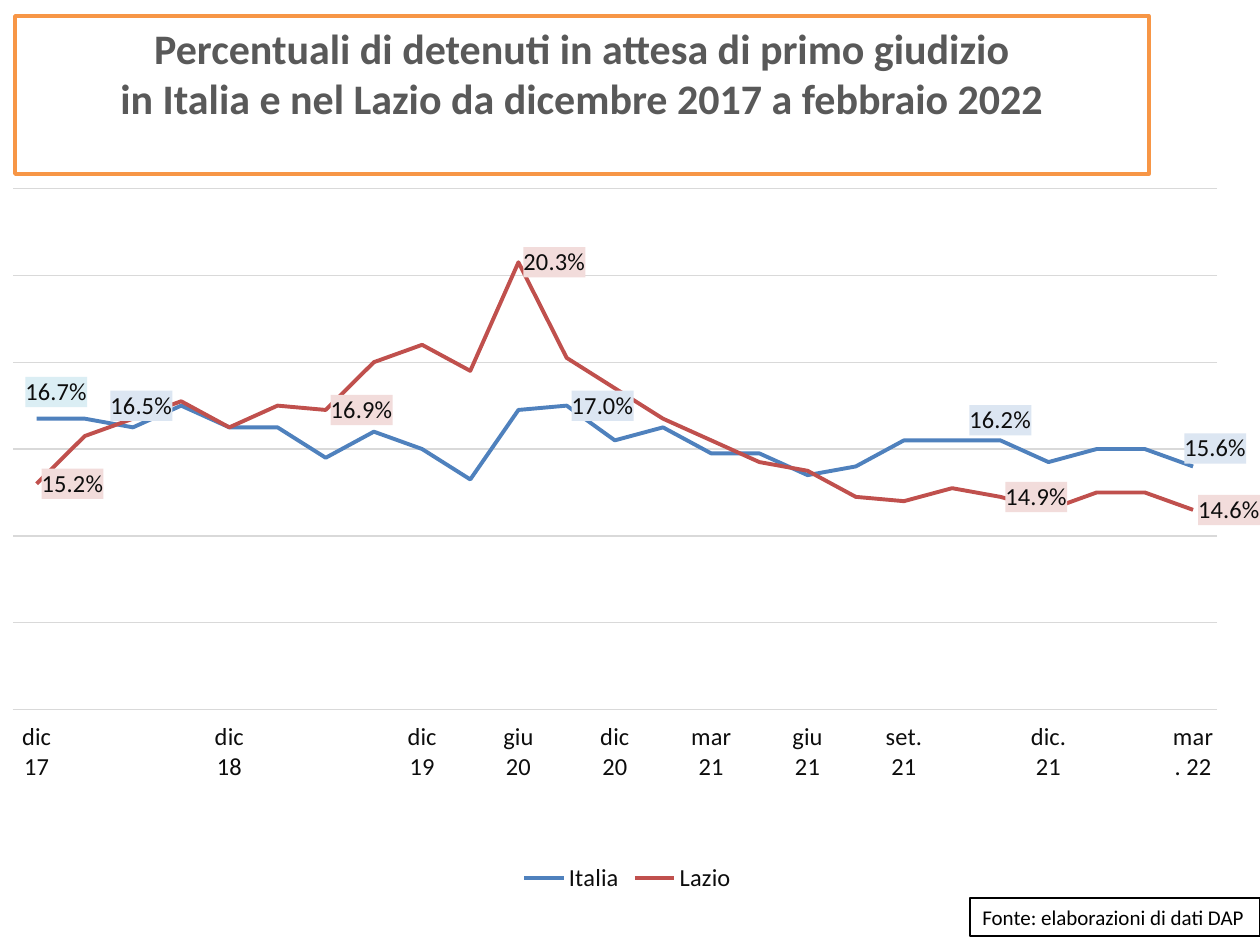
from lxml.etree import SubElement
from pptx import Presentation
from pptx.chart.data import CategoryChartData
from pptx.dml.color import RGBColor
from pptx.enum.chart import XL_CHART_TYPE, XL_LEGEND_POSITION, XL_MARKER_STYLE, XL_TICK_LABEL_POSITION, XL_TICK_MARK
from pptx.enum.shapes import MSO_SHAPE
from pptx.enum.text import MSO_ANCHOR, PP_ALIGN
from pptx.oxml import parse_xml
from pptx.oxml.ns import nsdecls, qn
from pptx.util import Emu, Pt

FONT = "Calibri"
TITLE = ("Percentuali di detenuti in attesa di primo giudizio\v"
         "in Italia e nel Lazio da dicembre 2017 a febbraio 2022")
SOURCE = "Fonte: elaborazioni di dati DAP"
CHART_WIDTH, CHART_HEIGHT = 1260, 724
PLOT = {"x": 0.01, "y": 0.02, "w": 0.96, "h": 0.72}
MONTH_COUNT = 25
MONTHS = {0: "mar. 22", 3: "dic. 21", 6: "set. 21", 8: "giu 21", 10: "mar 21",
          12: "dic 20", 14: "giu 20", 16: "dic 19", 20: "dic 18", 24: "dic 17"}
BLUE, TEAL, PINK = "DCE6F2", "DBEEF4", "F2DCDB"
SERIES = [
    {"name": "Italia", "color": "4F81BD",
     "values": [0.156, 0.16, 0.16, 0.157, 0.162, 0.162, 0.162, 0.156, 0.154,
                0.159, 0.159, 0.165, 0.162, 0.17, 0.169, 0.153, 0.16, 0.164,
                0.158, 0.165, 0.165, 0.17, 0.165, 0.167, 0.167],
     "labels": [(0, BLUE, "r", -14, -18), (4, BLUE, "t", 0, 0), (13, BLUE, "r", 0, 0),
                (22, BLUE, "r", -28, -22), (24, TEAL, "r", -17, -27)]},
    {"name": "Lazio", "color": "C0504D",
     "values": [0.146, 0.15, 0.15, 0.146, 0.149, 0.151, 0.148, 0.149, 0.155,
                0.157, 0.162, 0.167, 0.174, 0.181, 0.203, 0.178, 0.184, 0.18,
                0.169, 0.17, 0.165, 0.171, 0.167, 0.163, 0.152],
     "labels": [(point, PINK, "r", 0, 0) for point in (0, 4, 14, 18, 24)]},
]


def px(length):
    return Emu(round(length * 914400 / 126))


def color(value):
    return RGBColor.from_string(value)


def style_font(font, size, value, bold=False):
    font.name, font.size, font.bold = FONT, Pt(size), bold
    font.color.rgb = color(value)


def style_line(line, value, width):
    line.color.rgb, line.width = color(value), Pt(width)


def add_box(page, area, text, size, ink, border, width, bold=False):
    box = page.shapes.add_shape(MSO_SHAPE.RECTANGLE, *map(px, area))
    box.shadow.inherit = False
    box.fill.solid()
    box.fill.fore_color.rgb = color("FFFFFF")
    style_line(box.line, border, width)
    frame = box.text_frame
    frame.text = text
    for span in frame.paragraphs[0].runs:
        style_font(span.font, size, ink, bold)
    return frame


def layout_xml(values, modes=""):
    places = "".join(f'<c:{key} val="{value}"/>' for key, value in values.items())
    return f"<c:layout><c:manualLayout>{modes}{places}</c:manualLayout></c:layout>"


def show_xml(value):
    flags = {"LegendKey": 0, "Val": value, "CatName": 0, "SerName": 0, "Percent": 0, "BubbleSize": 0}
    return "".join(f'<c:show{key} val="{flag}"/>' for key, flag in flags.items())


def label_xml(point, fill, position, right, down):
    offset = {"x": round(right / CHART_WIDTH, 3), "y": round(down / CHART_HEIGHT, 3)}
    layout = layout_xml(offset) if right or down else ""
    return (f'<c:dLbl><c:idx val="{point}"/>{layout}'
            '<c:numFmt formatCode="0.0%" sourceLinked="0"/>'
            f'<c:spPr><a:solidFill><a:srgbClr val="{fill}"/></a:solidFill></c:spPr>'
            f'<c:dLblPos val="{position}"/>{show_xml(1)}</c:dLbl>')


def add_line_chart(page):
    data = CategoryChartData(number_format="0.0%")
    data.categories = [MONTHS.get(month, "") for month in range(MONTH_COUNT)]
    for entry in SERIES:
        data.add_series(entry["name"], entry["values"])
    area = map(px, (0, 174, CHART_WIDTH, CHART_HEIGHT))
    chart = page.shapes.add_chart(XL_CHART_TYPE.LINE, *area, data).chart
    chart.has_title = False
    style_font(chart.font, 14, "0D0D0D")
    chart.has_legend = True
    chart.legend.position = XL_LEGEND_POSITION.BOTTOM
    chart.legend.include_in_layout = False
    style_font(chart.legend.font, 14, "0D0D0D")

    months = chart.category_axis
    months.reverse_order = True
    months.major_tick_mark = months.minor_tick_mark = XL_TICK_MARK.NONE
    months.tick_label_position = XL_TICK_LABEL_POSITION.LOW
    style_font(months.tick_labels.font, 14, "0D0D0D")
    style_line(months.format.line, "D9D9D9", 0.75)
    skip = SubElement(months._element, qn("c:tickLblSkip"), val="1")
    months._element.find(qn("c:lblOffset")).addnext(skip)

    shares = chart.value_axis
    shares.minimum_scale, shares.maximum_scale, shares.major_unit = 0.1, 0.22, 0.02
    shares.has_major_gridlines = True
    style_line(shares.major_gridlines.format.line, "D9D9D9", 0.75)
    shares.visible = False

    plot = chart.plots[0]
    plot.vary_by_categories = False
    for series, entry in zip(plot.series, SERIES):
        series.smooth = False
        series.marker.style = XL_MARKER_STYLE.NONE
        style_line(series.format.line, entry["color"], 2.25)
        labels = "".join(label_xml(*label) for label in entry["labels"])
        block = parse_xml(f'<c:dLbls {nsdecls("c", "a")}>{labels}{show_xml(0)}</c:dLbls>')
        series._element.find(qn("c:cat")).addprevious(block)

    plot_area = chart._chartSpace.find(".//" + qn("c:plotArea"))
    for layout in plot_area.findall(qn("c:layout")):
        plot_area.remove(layout)
    modes = '<c:layoutTarget val="inner"/><c:xMode val="edge"/><c:yMode val="edge"/>'
    layout = layout_xml(PLOT, modes).replace("<c:layout>", f'<c:layout {nsdecls("c")}>', 1)
    plot_area.insert(0, parse_xml(layout))


def main():
    """Build the slide on detainees awaiting a first judgment."""
    deck = Presentation()
    deck.slide_width, deck.slide_height = px(1260), px(945)
    page = deck.slides.add_slide(deck.slide_layouts[6])
    title = add_box(page, (15, 16, 1134, 158), TITLE, 24, "595959", "F79646", 2, True)
    title.vertical_anchor = MSO_ANCHOR.TOP
    title.paragraphs[0].alignment = PP_ALIGN.CENTER
    source = add_box(page, (970, 898, 290, 38), SOURCE, 12, "000000", "000000", 0.75)
    source.word_wrap = False
    source.paragraphs[0].alignment = PP_ALIGN.LEFT
    add_line_chart(page)
    deck.save("out.pptx")


if __name__ == "__main__":
    main()
